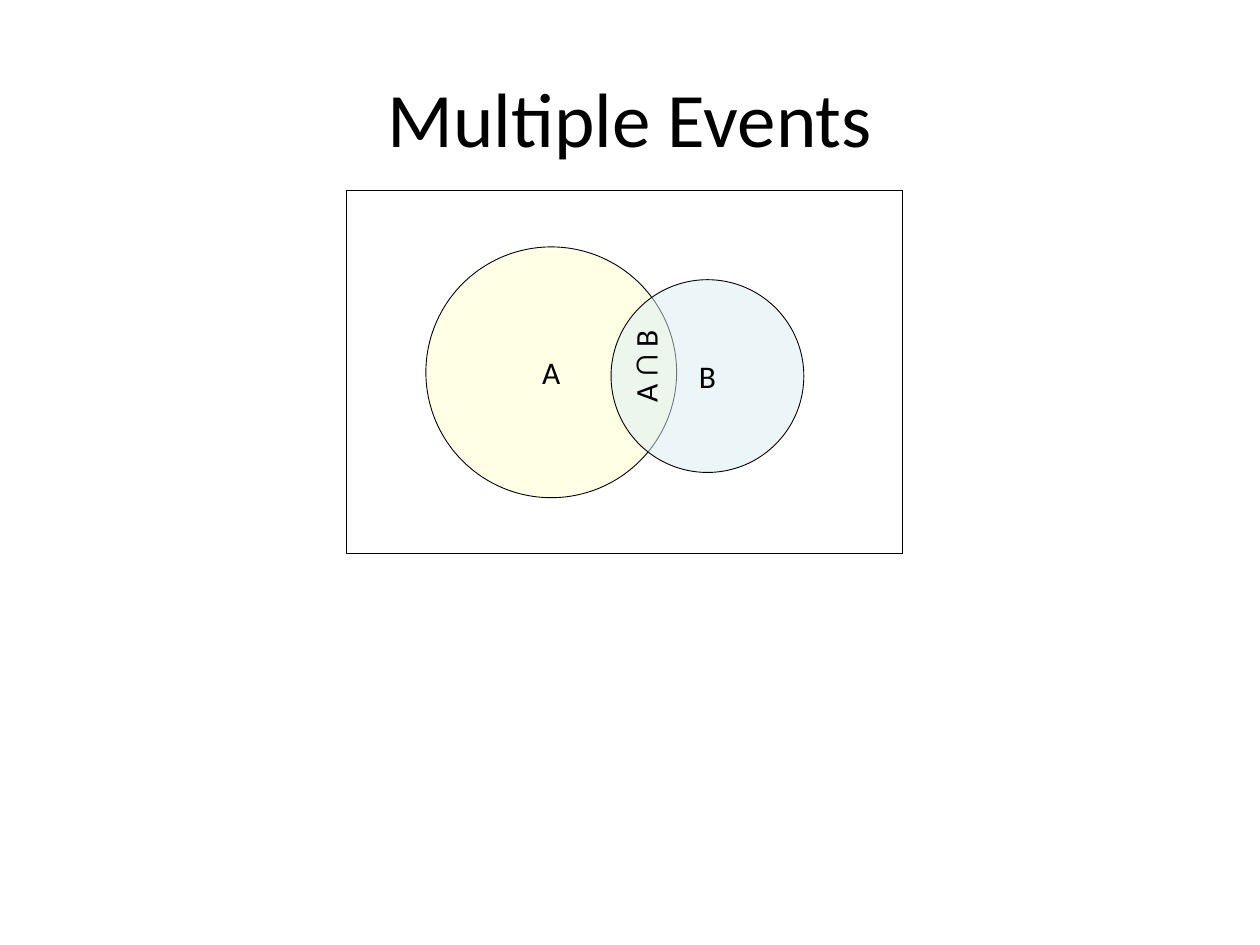
import pptx
import pptx.util
import pptx.dml.color
import pptx.enum.shapes
import pptx.enum.text
import pptx.oxml
import pptx.oxml.ns
from pptx.util import Inches

COLORS = {"ink": "000000", "event_a": "FFFFCC", "event_b": "DBEEF4"}
TITLE = ("Multiple Events", (0.5, 0.3, 9, 1.25))
SAMPLE_SPACE = (2.75, 1.51, 4.41, 2.88)
EVENTS = [
    ("A", (3.38, 1.96, 1.99, 1.99), "event_a"),
    ("B", (4.85, 2.22, 1.53, 1.53), "event_b"),
]
INTERSECTION = [("A ", "Calibri"), ("∩", "Cambria"), (" B", "Calibri")]
INTERSECTION_BOX = (4.73, 2.7, 0.78, 0.4)
OPACITY = 50


def rgb(name):
    return pptx.dml.color.RGBColor.from_string(COLORS[name])


def format_run(run, size, font_name="Calibri"):
    run.font.size = pptx.util.Pt(size)
    run.font.name = font_name
    run.font.color.rgb = rgb("ink")


def set_centred_text(shape, text, size):
    frame = shape.text_frame
    frame.text = text
    frame.vertical_anchor = pptx.enum.text.MSO_ANCHOR.MIDDLE
    paragraph = frame.paragraphs[0]
    paragraph.alignment = pptx.enum.text.PP_ALIGN.CENTER
    format_run(paragraph.runs[0], size)


def add_outlined_shape(slide, kind, box):
    shape = slide.shapes.add_shape(kind, *map(Inches, box))
    shape.shadow.inherit = False
    shape.fill.background()
    shape.line.color.rgb = rgb("ink")
    shape.line.width = pptx.util.Pt(0.5)
    return shape


def add_event(slide, label, box, color):
    circle = add_outlined_shape(slide, pptx.enum.shapes.MSO_SHAPE.OVAL, box)
    circle.fill.solid()
    circle.fill.fore_color.rgb = rgb(color)
    fill_color = circle.fill._xPr.find(".//" + pptx.oxml.ns.qn("a:srgbClr"))
    alpha = pptx.oxml.parse_xml(
        f'<a:alpha {pptx.oxml.ns.nsdecls("a")} val="{OPACITY * 1000}"/>'
    )
    fill_color.append(alpha)
    set_centred_text(circle, label, 18)


def add_intersection_label(slide):
    label = slide.shapes.add_textbox(*map(Inches, INTERSECTION_BOX))
    label.rotation = 270
    frame = label.text_frame
    frame.word_wrap = False
    frame.auto_size = pptx.enum.text.MSO_AUTO_SIZE.SHAPE_TO_FIT_TEXT
    for text, font_name in INTERSECTION:
        run = frame.paragraphs[0].add_run()
        run.text = text
        format_run(run, 18, font_name)


def main():
    presentation = pptx.Presentation()
    presentation.slide_width = Inches(10)
    presentation.slide_height = Inches(7.5)
    slide = presentation.slides.add_slide(presentation.slide_layouts[5])

    text, box = TITLE
    title = slide.shapes.title
    title.left, title.top, title.width, title.height = map(Inches, box)
    set_centred_text(title, text, 44)

    add_outlined_shape(slide, pptx.enum.shapes.MSO_SHAPE.RECTANGLE, SAMPLE_SPACE)
    for event in EVENTS:
        add_event(slide, *event)
    add_intersection_label(slide)

    presentation.save("out.pptx")


if __name__ == "__main__":
    main()
